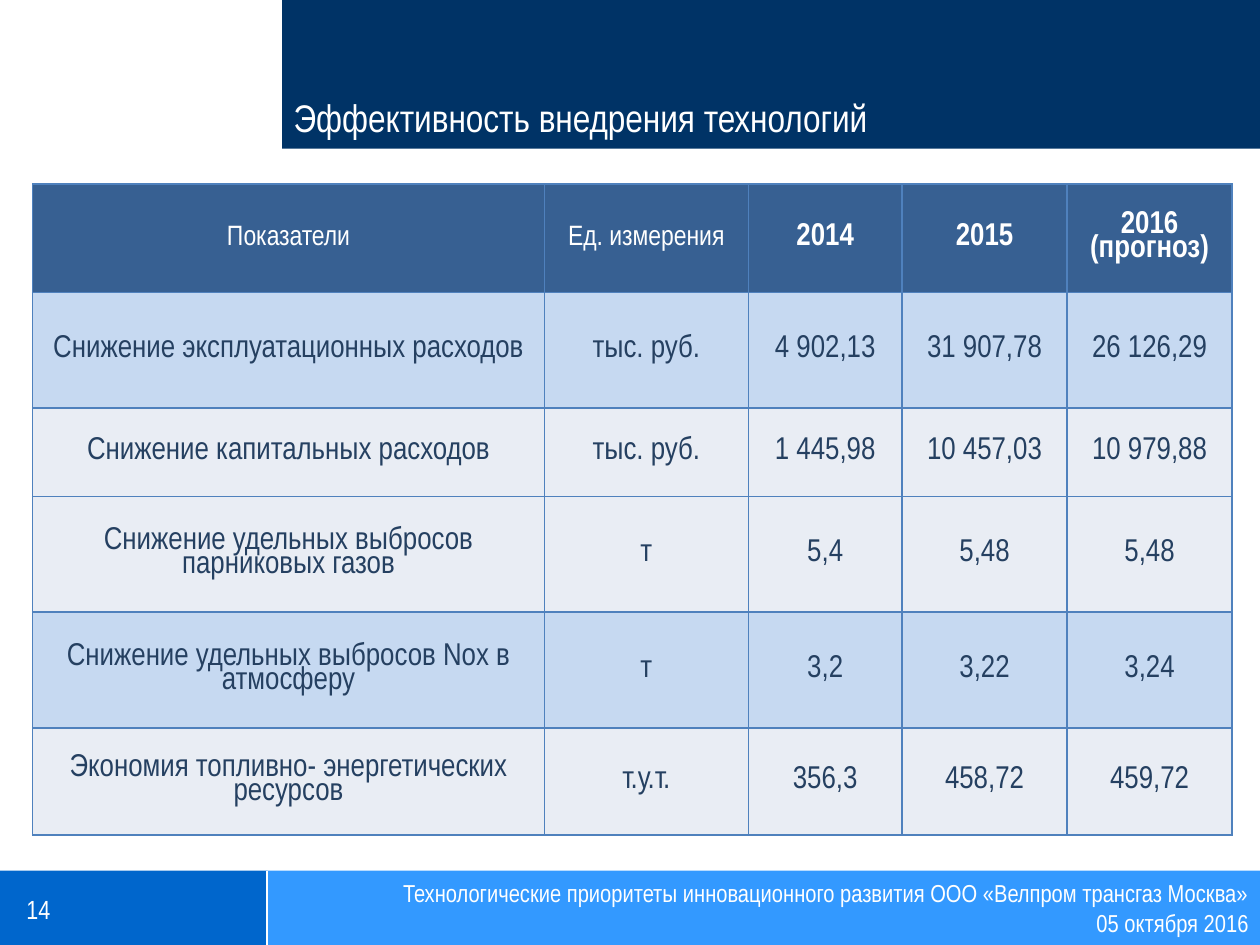
from lxml import etree
from pptx import Presentation
from pptx.dml.color import RGBColor
from pptx.enum.shapes import MSO_CONNECTOR, MSO_SHAPE
from pptx.enum.text import MSO_ANCHOR, PP_ALIGN
from pptx.oxml.ns import qn
from pptx.util import Inches, Pt

RECTANGLE = MSO_SHAPE.RECTANGLE
STRAIGHT = MSO_CONNECTOR.STRAIGHT
LEFT, CENTER, RIGHT = PP_ALIGN.LEFT, PP_ALIGN.CENTER, PP_ALIGN.RIGHT
TOP, MIDDLE, BOTTOM = MSO_ANCHOR.TOP, MSO_ANCHOR.MIDDLE, MSO_ANCHOR.BOTTOM

FONT = "Arial Narrow"
COLORS = {
    "white": "FFFFFF",
    "title": "003366",
    "number": "0066CC",
    "footer": "3399FF",
    "header": "376092",
    "accent_row": "C6D9F1",
    "plain_row": "E9EDF4",
    "ink": "254061",
    "border": "4F81BD",
}
COLUMN_WIDTHS = [4.06, 1.62, 1.22, 1.31, 1.31]
ROW_HEIGHTS = [0.86, 0.92, 0.7, 0.92, 0.92, 0.85]
ROW_FILLS = ["header", "accent_row", "plain_row", "plain_row", "accent_row", "plain_row"]
ROWS = [
    ["Показатели", "Ед. измерения", "2014", "2015", "2016\n(прогноз)"],
    ["Снижение эксплуатационных расходов", "тыс. руб.", "4 902,13", "31 907,78", "26 126,29"],
    ["Снижение капитальных расходов", "тыс. руб.", "1 445,98", "10 457,03", "10 979,88"],
    ["Снижение удельных выбросов парниковых газов", "т", "5,4", "5,48", "5,48"],
    ["Снижение удельных выбросов Nox в атмосферу", "т", "3,2", "3,22", "3,24"],
    ["Экономия топливно- энергетических ресурсов", "т.у.т.", "356,3", "458,72", "459,72"],
]
FOOTER_TEXT = (
    "Технологические приоритеты инновационного развития ООО «Велпром трансгаз Москва»\n"
    "05 октября 2016"
)


def rgb(name):
    """Return the named colour."""
    return RGBColor.from_string(COLORS[name])


def write_text(frame, text, size, color="white", bold=False, align=LEFT, spacing=None):
    """Write one paragraph for each line of text."""
    for index, line in enumerate(text.split("\n")):
        para = frame.add_paragraph() if index else frame.paragraphs[0]
        para.alignment = align
        para.line_spacing = spacing
        span = para.add_run()
        span.text = line
        span.font.name = FONT
        span.font.size = Pt(size)
        span.font.bold = bold
        span.font.color.rgb = rgb(color)


def add_label(page, left, top, width, height, text, size, anchor=TOP, inset=0.04, align=LEFT):
    """Add a wrapped text box."""
    box = page.shapes.add_textbox(Inches(left), Inches(top), Inches(width), Inches(height))
    frame = box.text_frame
    frame.word_wrap = True
    frame.vertical_anchor = anchor
    frame.margin_left = frame.margin_right = Inches(0.09)
    frame.margin_top = frame.margin_bottom = Inches(inset)
    write_text(frame, text, size, align=align)


def add_band(page, left, top, width, height, color):
    """Add a plain filled rectangle."""
    band = page.shapes.add_shape(
        RECTANGLE, Inches(left), Inches(top), Inches(width), Inches(height)
    )
    band.shadow.inherit = False
    band.fill.solid()
    band.fill.fore_color.rgb = rgb(color)
    band.line.fill.background()


def add_title(page, left, top, width, height):
    """Place the title on its dark band."""
    add_band(page, left, top, width, height, "title")
    add_label(page, left, top - 0.03, width, height,
              "Эффективность внедрения технологий", 22, anchor=BOTTOM)


def add_footer(page, left, top, width, height):
    """Place the slide number and the talk name on two bands."""
    split = left + 2.12
    add_band(page, left, top, split - left, height, "number")
    add_band(page, split, top, left + width - split, height, "footer")
    divider = page.shapes.add_connector(
        STRAIGHT, Inches(split), Inches(top), Inches(split), Inches(top + height)
    )
    divider.line.color.rgb = rgb("white")
    divider.line.width = Pt(1.25)
    etree.SubElement(divider._element.spPr, qn("a:effectLst"))
    add_label(page, left + 0.12, top + 0.14, 2.12, 0.34, "14", 15)
    add_label(page, left + 2.35, top + 0.06, width - 2.35, 0.47, FOOTER_TEXT, 14,
              inset=0, align=RIGHT)


def add_borders(cell):
    """Draw a thin line on all four sides of a cell."""
    properties = cell._tc.get_or_add_tcPr()
    for side in ("lnL", "lnR", "lnT", "lnB"):
        line = etree.SubElement(properties, qn(f"a:{side}"), w=str(Pt(1)))
        fill = etree.SubElement(line, qn("a:solidFill"))
        etree.SubElement(fill, qn("a:srgbClr"), val=COLORS["border"])


def add_indicators(page, left, top, width, height):
    """Place the table of indicators by year."""
    table = page.shapes.add_table(
        len(ROWS), len(COLUMN_WIDTHS), Inches(left), Inches(top), Inches(width), Inches(height)
    ).table
    for column, column_width in zip(table.columns, COLUMN_WIDTHS):
        column.width = Inches(column_width)
    for row_index, (texts, row_fill) in enumerate(zip(ROWS, ROW_FILLS)):
        table.rows[row_index].height = Inches(ROW_HEIGHTS[row_index])
        heading = row_index == 0
        for column_index, text in enumerate(texts):
            cell = table.cell(row_index, column_index)
            add_borders(cell)
            cell.fill.solid()
            cell.fill.fore_color.rgb = rgb(row_fill)
            cell.vertical_anchor = MIDDLE
            cell.margin_left = cell.margin_right = Inches(0.01 if heading else 0)
            cell.margin_top = Inches(0.01 if heading else 0)
            cell.margin_bottom = 0
            write_text(
                cell.text_frame,
                text,
                size=16 if heading and column_index < 2 else 18,
                color="white" if heading else "ink",
                bold=heading and column_index >= 2,
                align=CENTER,
                spacing=0.8,
            )


def main():
    """Build and save the slide."""
    deck = Presentation()
    deck.slide_width, deck.slide_height = Inches(10), Inches(7.5)
    page = deck.slides.add_slide(deck.slide_layouts[6])
    add_footer(page, 0, 6.91, 10, 0.59)
    add_title(page, 2.24, 0, 7.76, 1.18)
    add_indicators(page, 0.26, 1.46, sum(COLUMN_WIDTHS), sum(ROW_HEIGHTS))
    deck.save("out.pptx")


if __name__ == "__main__":
    main()
